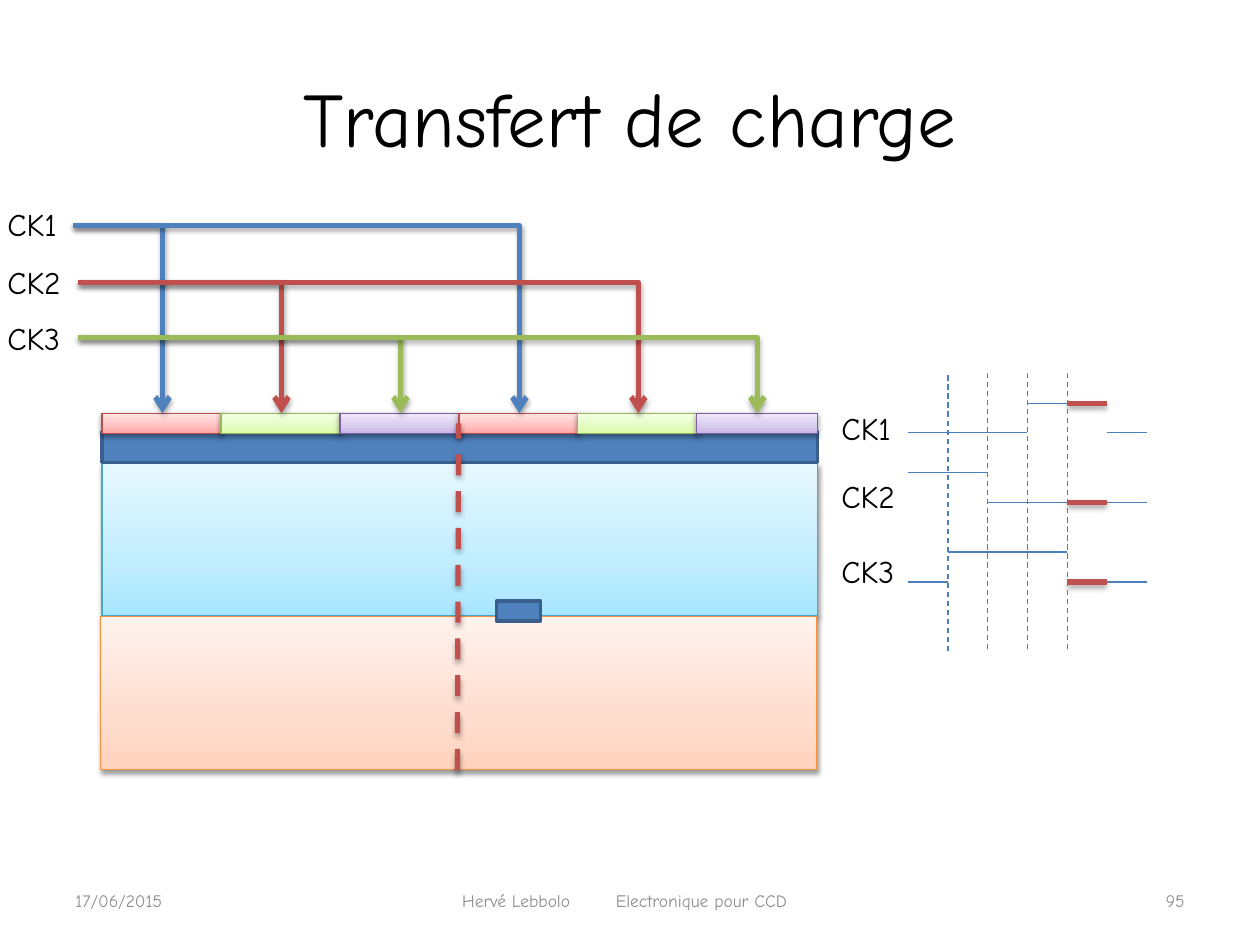
from copy import deepcopy

from pptx import Presentation
from pptx.dml.color import RGBColor
from pptx.enum import dml, shapes, text
from pptx.oxml.ns import qn
from pptx.oxml.xmlchemy import OxmlElement
from pptx.util import Inches, Pt

FONT = "Comic Neue"
BLACK = RGBColor(0x00, 0x00, 0x00)
GREY = RGBColor(0x8C, 0x8C, 0x8C)
BLUE = RGBColor(0x4F, 0x81, 0xBD)
NAVY = RGBColor(0x3A, 0x5F, 0x8C)
RED = RGBColor(0xC0, 0x50, 0x4D)
GREEN = RGBColor(0x9B, 0xBB, 0x59)
TRACE = RGBColor(0x4B, 0x7E, 0xBC)
CYAN_EDGE = RGBColor(0x46, 0xAA, 0xC5)
ORANGE_EDGE = RGBColor(0xF6, 0x92, 0x40)
RED_EDGE = RGBColor(0xBF, 0x4C, 0x48)
GREEN_EDGE = RGBColor(0x98, 0xB9, 0x55)
PURPLE_EDGE = RGBColor(0x7D, 0x60, 0xA0)
# Gradient colours from bottom to top
CYANS = [RGBColor(0xA7, 0xE6, 0xFF), RGBColor(0xC1, 0xED, 0xFF), RGBColor(0xE7, 0xF8, 0xFF)]
ORANGES = [RGBColor(0xFF, 0xD2, 0xBD), RGBColor(0xFF, 0xDE, 0xD0), RGBColor(0xFF, 0xF2, 0xED)]
REDS = [RGBColor(0xFF, 0xA6, 0xA5), RGBColor(0xFF, 0xC0, 0xBF), RGBColor(0xFF, 0xE7, 0xE7)]
GREENS = [RGBColor(0xDA, 0xFD, 0xA7), RGBColor(0xE4, 0xFC, 0xC2), RGBColor(0xF5, 0xFF, 0xE7)]
PURPLES = [RGBColor(0xC9, 0xB5, 0xE8), RGBColor(0xD8, 0xCB, 0xEE), RGBColor(0xF0, 0xEA, 0xF9)]

LEFT, CENTER, RIGHT = text.PP_ALIGN.LEFT, text.PP_ALIGN.CENTER, text.PP_ALIGN.RIGHT
MIDDLE, TOP = text.MSO_ANCHOR.MIDDLE, text.MSO_ANCHOR.TOP

prs = Presentation()
prs.slide_width, prs.slide_height = Inches(10), Inches(7.5)
s = prs.slides.add_slide(prs.slide_layouts[6])


def set_shadow(sp, opacity=0, distance=0):
    """Replace the theme shadow by a soft one below, or by none at zero opacity."""
    effects = OxmlElement("a:effectLst")
    if opacity:
        shadow = OxmlElement("a:outerShdw")
        for name, value in (("blurRad", Pt(3.1)), ("dist", Pt(distance)), ("dir", 5400000), ("rotWithShape", 0)):
            shadow.set(name, str(value))
        color = OxmlElement("a:srgbClr")
        color.set("val", "000000")
        alpha = OxmlElement("a:alpha")
        alpha.set("val", str(opacity * 1000))
        color.append(alpha)
        shadow.append(color)
        effects.append(shadow)
    sp._element.spPr.append(effects)


def add_line(x1, y1, x2, y2, color, width=0.75, dashed=False, kind=shapes.MSO_CONNECTOR.STRAIGHT):
    """Add a connector; thick ones carry a shadow."""
    line = s.shapes.add_connector(kind, Inches(x1), Inches(y1), Inches(x2), Inches(y2))
    line.line.color.rgb = color
    line.line.width = Pt(width)
    if dashed:
        line.line.dash_style = dml.MSO_LINE.DASH
    set_shadow(line, 35 if width > 1 else 0, 1.8)
    return line


# Layers, electrodes and charge packet
PITCH, ELECTRODE_TOP = 0.944, 3.28
electrode_styles = [(REDS, RED_EDGE), (GREENS, GREEN_EDGE), (PURPLES, PURPLE_EDGE)] * 2
boxes = [(0.81, 3.67, 5.68, 1.22, CYANS, CYAN_EDGE), (0.81, 3.43, 5.68, 0.24, BLUE, NAVY)]
boxes += [(0.81 + i * PITCH, ELECTRODE_TOP, 0.96, 0.16, *style) for i, style in enumerate(electrode_styles)]
boxes += [(0.8, 4.89, 5.68, 1.22, ORANGES, ORANGE_EDGE), (3.94, 4.77, 0.35, 0.16, BLUE, NAVY)]
for x, y, w, h, fill, edge in boxes:
    sp = s.shapes.add_shape(shapes.MSO_SHAPE.RECTANGLE, Inches(x), Inches(y), Inches(w), Inches(h))
    sp.line.color.rgb = edge
    if isinstance(fill, list):
        sp.line.width = Pt(0.75)
        sp.fill.gradient()
        sp.fill.gradient_angle = 90
        stop_list = sp._element.spPr.find(".//" + qn("a:gsLst"))
        stop_list.insert(1, deepcopy(stop_list[0]))
        for stop, color, position in zip(sp.fill.gradient_stops, fill, (0, 0.35, 1)):
            stop.color.rgb = color
            stop.position = position
        set_shadow(sp, 38, 1.6)
    else:
        sp.line.width = Pt(2)
        sp.fill.solid()
        sp.fill.fore_color.rgb = fill
        set_shadow(sp)

add_line(3.63, 6.11, 3.64, 3.36, RED, 3, dashed=True)

# Title, footer and clock labels
labels = [
    ("Transfert de charge", 0.5, 0.3, 9, 1.25, 44, BLACK, CENTER, MIDDLE),
    ("17/06/2015", 0.5, 6.95, 1.51, 0.4, 10, GREY, LEFT, MIDDLE),
    ("Hervé Lebbolo\tElectronique pour CCD", 3.57, 6.95, 2.9, 0.4, 10, GREY, LEFT, MIDDLE),
    ("95", 8.31, 6.95, 1.19, 0.4, 10, GREY, RIGHT, MIDDLE),
]
for x, tops in ((-0.04, (1.58, 2.04, 2.48)), (6.58, (3.2, 3.74, 4.33))):
    for name, y, w in zip(("CK1", "CK2", "CK3"), tops, (0.62, 0.66, 0.66)):
        labels.append((name, x, y, w, 0.4, 18, BLACK, LEFT, TOP))
for content, x, y, w, h, size, color, align, anchor in labels:
    tf = s.shapes.add_textbox(Inches(x), Inches(y), Inches(w), Inches(h)).text_frame
    tf.word_wrap = anchor == MIDDLE
    tf.vertical_anchor = anchor
    p = tf.paragraphs[0]
    p.alignment = align
    if "\t" in content:
        tabs = OxmlElement("a:tabLst")
        tab = OxmlElement("a:tab")
        tab.set("pos", str(Inches(1.22)))
        tab.set("algn", "l")
        tabs.append(tab)
        p._p.get_or_add_pPr().append(tabs)
    r = p.add_run()
    r.text = content
    r.font.name, r.font.size = FONT, Pt(size)
    r.font.color.rgb = color

# Each clock drives every third electrode
for i, (x, y, color) in enumerate([(0.58, 1.79, BLUE), (0.62, 2.24, RED), (0.62, 2.68, GREEN)]):
    for electrode in (i, i + 3):
        wire = add_line(x, y, 1.29 + electrode * PITCH, ELECTRODE_TOP, color, 3,
                        kind=shapes.MSO_CONNECTOR.ELBOW)
        spPr = wire._element.spPr
        spPr.find(qn("a:prstGeom")).set("prst", "bentConnector2")
        arrow = OxmlElement("a:tailEnd")
        arrow.set("type", "arrow")
        spPr.find(qn("a:ln")).append(arrow)

# Timing diagram: one level per step, the current step in red
STEP, CURRENT = 0.315, 4
edges = [7.21 + i * STEP for i in range(7)]
for high, low, levels in ((3.2, 3.43, "LLLHHL"), (3.75, 3.99, "HHLLLL"), (4.38, 4.62, "LHHHLL")):
    for i, level in enumerate(levels):
        y = high if level == "H" else low
        color, width = (RED, 3) if i == CURRENT else (TRACE, 0.75)
        add_line(edges[i], y, edges[i + 1], y, color, width)
for x, shift in zip(edges[1:5], (0.02, 0, 0, 0)):
    add_line(x, 5.15 + shift, x, 2.96 + shift, TRACE, dashed=True)

prs.save("out.pptx")
